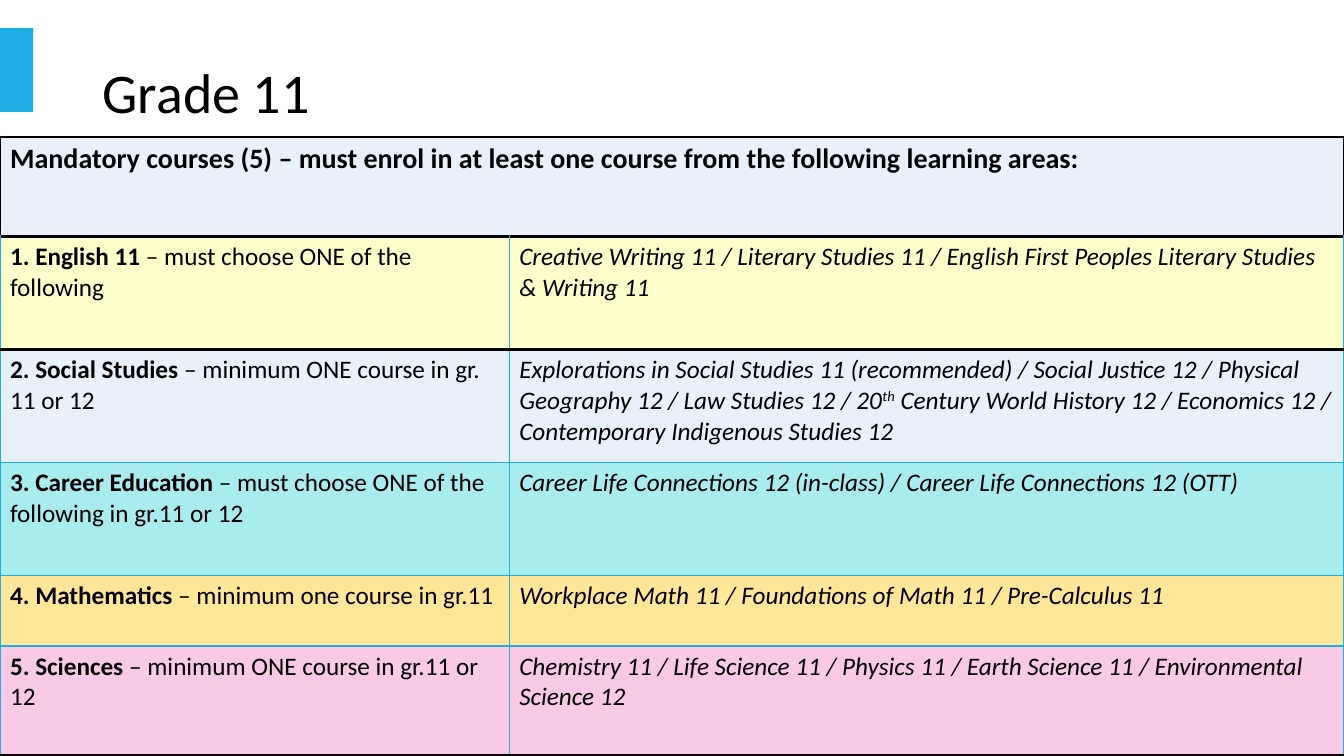
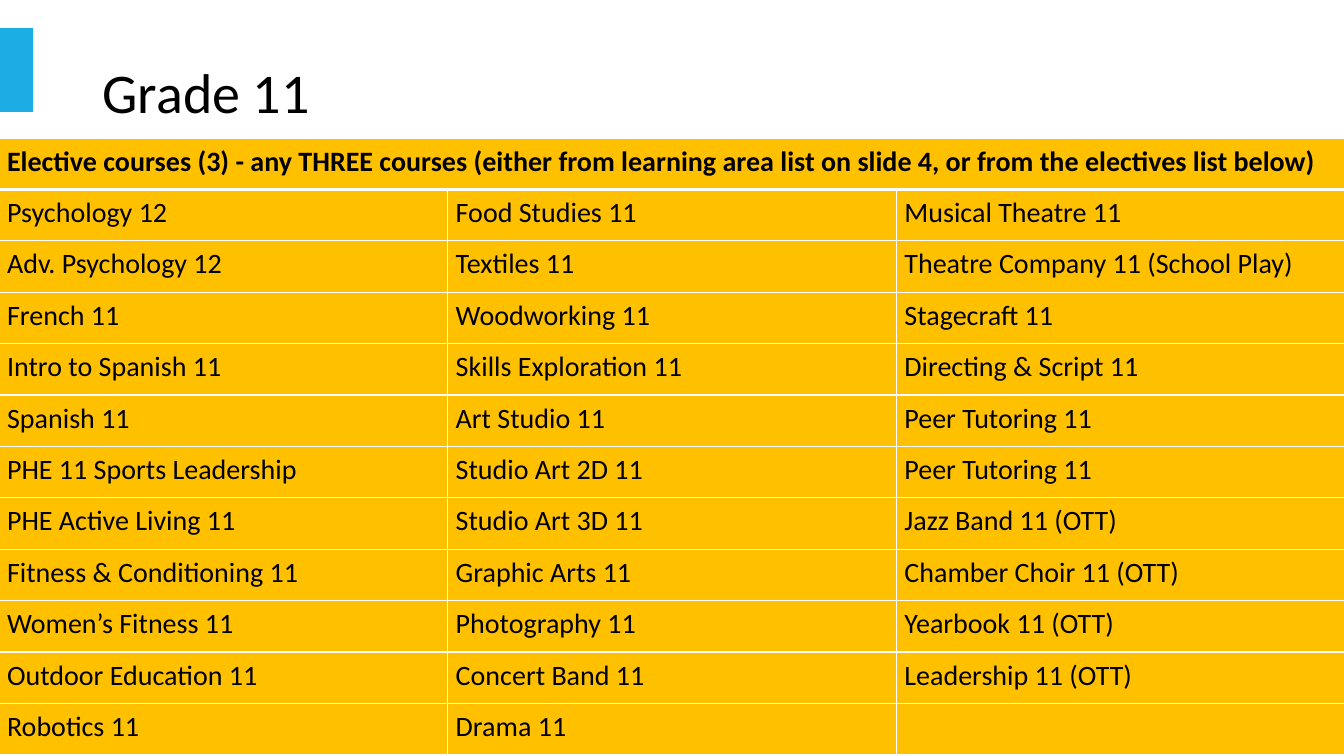
from dataclasses import dataclass

from lxml.etree import SubElement
from pptx import Presentation
from pptx.dml.color import RGBColor
from pptx.enum.shapes import MSO_SHAPE as Shape
from pptx.enum.text import MSO_ANCHOR as Anchor
from pptx.oxml.ns import qn
from pptx.util import Inches, Pt


@dataclass(frozen=True)
class Theme:
    font: str = "Calibri"
    text: str = "000000"
    accent: str = "1CADE4"
    line: str = "000000"
    white: str = "FFFFFF"
    pale_blue: str = "E8F1FA"
    yellow: str = "FFFFCC"
    aqua: str = "A8ECEF"
    sand: str = "FFE699"
    pink: str = "F9C9E6"
    amber: str = "FFC000"
    title_size: int = 40
    heading_size: int = 20
    course_size: int = 18


THEME = Theme()
THIN_BLUE = (THEME.accent, 1)
THICK_BLACK = (THEME.line, 2.25)
THIN_WHITE = (THEME.white, 1)
THICK_WHITE = (THEME.white, 3)

MANDATORY_HEADING = (
    "Mandatory courses (5) – must enrol in at least one course "
    "from the following learning areas:"
)
MANDATORY = [
    ("1. English 11", " – must choose ONE of the following",
     ["Creative Writing 11 / Literary Studies 11 / "
      "English First Peoples Literary Studies & Writing 11"],
     THEME.yellow),
    ("2. Social Studies", " – minimum ONE course in gr. 11 or 12",
     ["Explorations in Social Studies 11 (recommended) / Social Justice 12 / "
      "Physical Geography 12 / Law Studies 12 / 20",
      "th",
      " Century World History 12 / Economics 12 / "
      "Contemporary Indigenous Studies 12"],
     THEME.pale_blue),
    ("3. Career Education", " – must choose ONE of the following in gr.11 or 12",
     ["Career Life Connections 12 (in-class) / Career Life Connections 12 (OTT)"],
     THEME.aqua),
    ("4. Mathematics", " – minimum one course in gr.11",
     ["Workplace Math 11 / Foundations of Math 11 / Pre-Calculus 11"],
     THEME.sand),
    ("5. Sciences", " – minimum ONE course in gr.11 or 12",
     ["Chemistry 11 / Life Science 11 / Physics 11 / Earth Science 11 / "
      "Environmental Science 12"],
     THEME.pink),
]

ELECTIVES_HEADING = (
    "Elective courses (3) - any THREE courses (either from learning area list "
    "on slide 4, or from the electives list below)"
)
ELECTIVES = [
    ("Psychology 12", "Food Studies 11", "Musical Theatre 11"),
    ("Adv. Psychology 12", "Textiles 11", "Theatre Company 11 (School Play)"),
    ("French 11", "Woodworking 11", "Stagecraft 11"),
    ("Intro to Spanish 11", "Skills Exploration 11", "Directing & Script 11"),
    ("Spanish 11", "Art Studio 11", "Peer Tutoring 11"),
    ("PHE 11 Sports Leadership", "Studio Art 2D 11", "Peer Tutoring 11"),
    ("PHE Active Living 11", "Studio Art 3D 11", "Jazz Band 11 (OTT)"),
    ("Fitness & Conditioning 11", "Graphic Arts 11", "Chamber Choir 11 (OTT)"),
    ("Women’s Fitness 11", "Photography 11", "Yearbook 11 (OTT)"),
    ("Outdoor Education 11", "Concert Band 11", "Leadership 11 (OTT)"),
    ("Robotics 11", "Drama 11", ""),
]


def style_para(para, size, bold=None, italic=None):
    font = para.font
    font.name = THEME.font
    font.size = Pt(size)
    font.color.rgb = RGBColor.from_string(THEME.text)
    font.bold = bold
    font.italic = italic


def add_span(para, text, bold=None, raised=False):
    span = para.add_run()
    span.text = text
    span.font.bold = bold
    if raised:
        span._r.get_or_add_rPr().set("baseline", "30000")


def add_page(deck, title):
    page = deck.slides.add_slide(deck.slide_layouts[6])
    tab = page.shapes.add_shape(
        Shape.RECTANGLE, 0, Inches(0.28), Inches(0.33), Inches(0.83))
    tab.shadow.inherit = False
    tab.fill.solid()
    tab.fill.fore_color.rgb = RGBColor.from_string(THEME.accent)
    tab.line.fill.background()

    box = page.shapes.add_textbox(
        Inches(0.92), Inches(0.22), Inches(11.5), Inches(1.45))
    frame = box.text_frame
    frame.word_wrap = True
    frame.vertical_anchor = Anchor.MIDDLE
    para = frame.paragraphs[0]
    para.line_spacing = 0.9
    add_span(para, title)
    style_para(para, THEME.title_size)
    return page


def add_grid(page, left, top, widths, heights):
    frame = page.shapes.add_table(
        len(heights), len(widths), Inches(left), Inches(top),
        Inches(sum(widths)), Inches(sum(heights)))
    table = frame.table
    table.first_row = False
    table.horz_banding = False
    for column, width in zip(table.columns, widths):
        column.width = Inches(width)
    for row, height in zip(table.rows, heights):
        row.height = Inches(height)
    table.cell(0, 0).merge(table.cell(0, len(widths) - 1))
    return table


def paint_cell(cell, fill, sides, top, bottom):
    properties = cell._tc.get_or_add_tcPr()
    edges = {"a:lnL": sides, "a:lnR": sides, "a:lnT": top, "a:lnB": bottom}
    for tag, (color, width) in edges.items():
        edge = SubElement(properties, qn(tag), w=str(Pt(width)))
        solid = SubElement(edge, qn("a:solidFill"))
        SubElement(solid, qn("a:srgbClr"), val=color)
    cell.fill.solid()
    cell.fill.fore_color.rgb = RGBColor.from_string(fill)


def paint_grid(table, fills, sides, rules):
    for index, row in enumerate(table.rows):
        for cell in row.cells:
            paint_cell(cell, fills[index], sides[index],
                       rules[index], rules[index + 1])


def add_mandatory_page(deck):
    page = add_page(deck, "Grade 11")
    table = add_grid(page, 0, 1.36, [5.05, 8.28],
                     [0.99, 1.12, 1.12, 1.12, 0.7, 1.09])
    paint_grid(
        table,
        fills=[THEME.pale_blue] + [area[-1] for area in MANDATORY],
        sides=[THICK_BLACK] + [THIN_BLUE] * len(MANDATORY),
        rules=[THICK_BLACK] * 3 + [THIN_BLUE] * 3 + [THICK_BLACK])

    heading = table.cell(0, 0).text_frame.paragraphs[0]
    add_span(heading, MANDATORY_HEADING)
    style_para(heading, THEME.heading_size, bold=True)

    for row, (area, rule, courses, _) in enumerate(MANDATORY, start=1):
        para = table.cell(row, 0).text_frame.paragraphs[0]
        add_span(para, area, bold=True)
        add_span(para, rule)
        style_para(para, THEME.course_size)
        para = table.cell(row, 1).text_frame.paragraphs[0]
        for text in courses:
            add_span(para, text, raised=text == "th")
        style_para(para, THEME.course_size, italic=True)


def add_electives_page(deck):
    page = add_page(deck, "Grade 11")
    count = len(ELECTIVES) + 1
    table = add_grid(page, -0.01, 1.37, [4.45] * 3, [0.51] * count)
    paint_grid(
        table,
        fills=[THEME.amber] * count,
        sides=[THIN_WHITE] * count,
        rules=[THIN_WHITE, THICK_WHITE] + [THIN_WHITE] * (count - 1))

    for row, texts in enumerate([(ELECTIVES_HEADING,)] + ELECTIVES):
        for column, text in enumerate(texts):
            cell = table.cell(row, column)
            cell.margin_left = cell.margin_right = Inches(0.08)
            cell.margin_top = cell.margin_bottom = Inches(0.04)
            para = cell.text_frame.paragraphs[0]
            para.line_spacing = 1.07
            para.space_after = Pt(8)
            if text:
                add_span(para, text)
            style_para(para, THEME.heading_size, bold=row == 0)


def main():
    deck = Presentation()
    deck.slide_width = Inches(13.33)
    deck.slide_height = Inches(7.5)
    add_mandatory_page(deck)
    add_electives_page(deck)
    deck.save("out.pptx")


if __name__ == "__main__":
    main()
